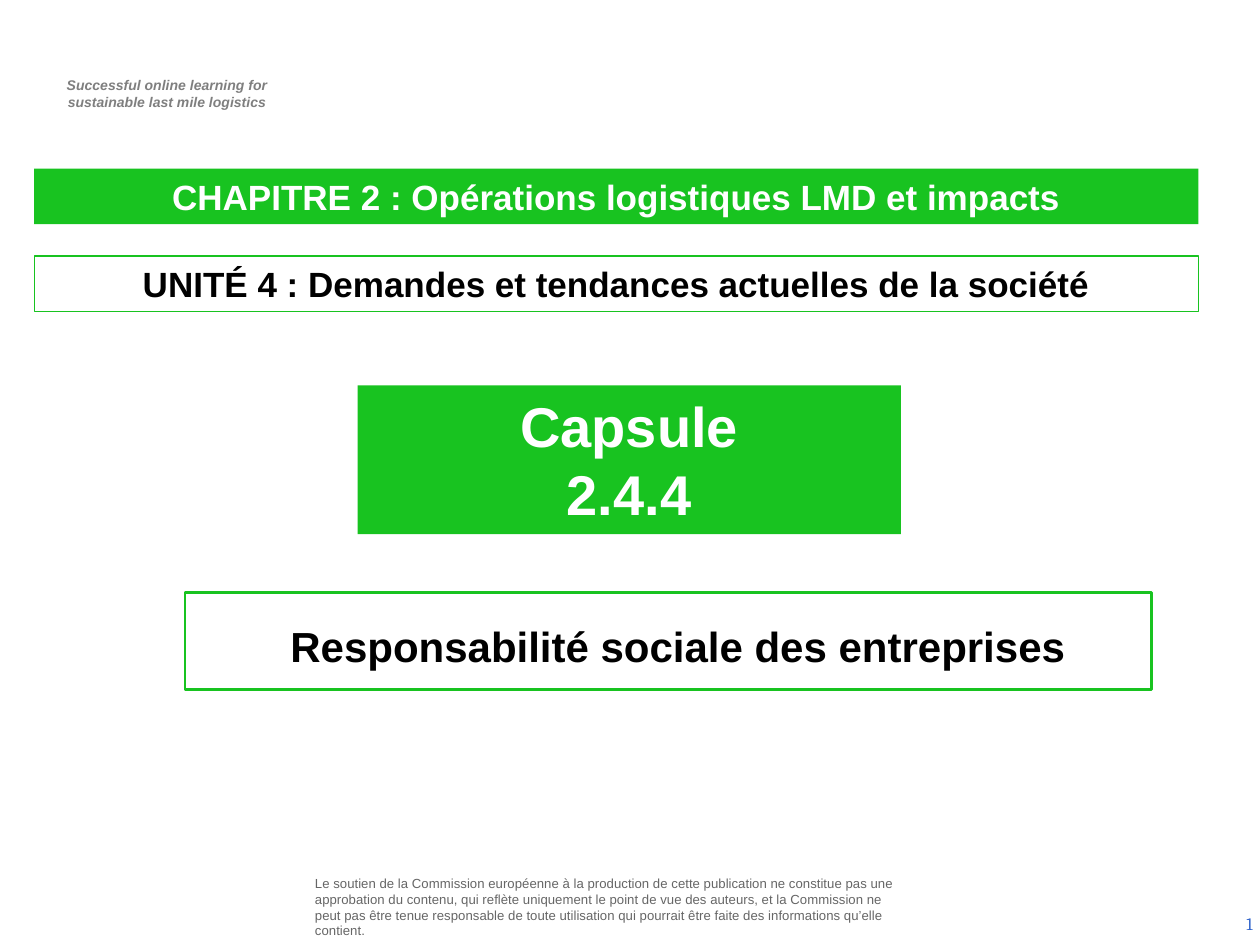
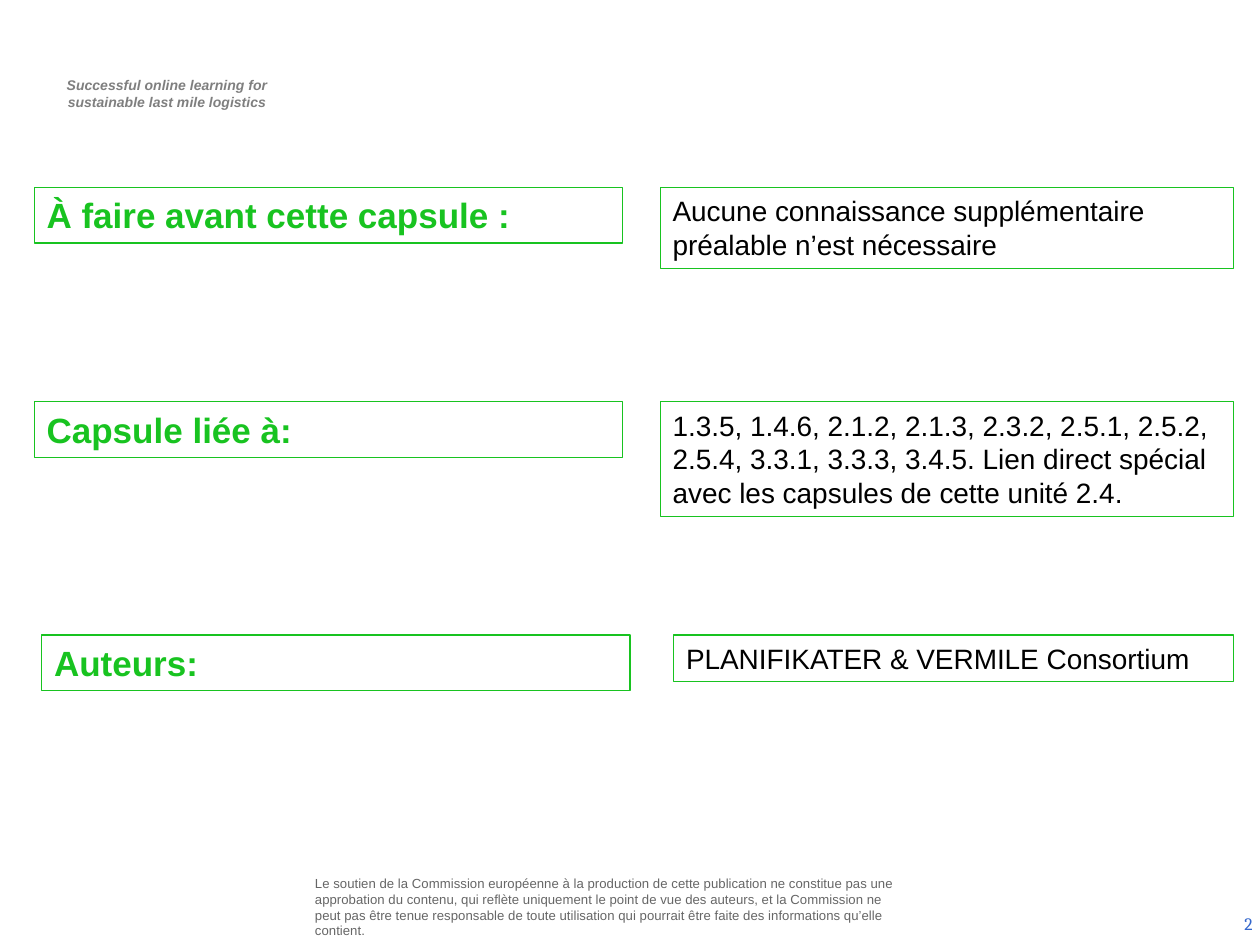
from pptx import Presentation
from pptx.dml.color import RGBColor
from pptx.enum.shapes import MSO_SHAPE
from pptx.enum.text import MSO_ANCHOR as ANCHOR, PP_ALIGN as ALIGN
from pptx.oxml.ns import qn
from pptx.util import Cm, Pt

GREEN = RGBColor(0x18, 0xC3, 0x20)
WHITE = RGBColor(0xFF, 0xFF, 0xFF)
BLACK = RGBColor(0x00, 0x00, 0x00)
TAGLINE_GREY = RGBColor(0x7F, 0x7F, 0x7F)
FOOTER_GREY = RGBColor(0x66, 0x66, 0x66)
NUMBER_BLUE = RGBColor(0x33, 0x66, 0xCC)

INSETS = (0.25, 0.13, 0.25, 0.13)
TAGLINE = "Successful online learning for\nsustainable last mile logistics"
DISCLAIMER = (
    "Le soutien de la Commission européenne à la production de cette publication "
    "ne constitue pas une approbation du contenu, qui reflète uniquement le point "
    "de vue des auteurs, et la Commission ne peut pas être tenue responsable de "
    "toute utilisation qui pourrait être faite des informations qu’elle contient."
)


def write(box, text, size, color, font="Arial", bold=False, italic=False,
          align=ALIGN.LEFT, anchor=ANCHOR.TOP, insets=INSETS):
    """Fill a box with text, one paragraph per line; insets are in cm."""
    frame = box.text_frame
    frame.word_wrap = True
    frame.vertical_anchor = anchor
    frame.margin_left, frame.margin_top, frame.margin_right, frame.margin_bottom = map(Cm, insets)
    frame.text = text
    for para in frame.paragraphs:
        para.alignment = align
        for span in para.runs:
            span.font.name = font
            span.font.size = Pt(size)
            span.font.bold = bold
            span.font.italic = italic
            span.font.color.rgb = color


def add_panel(page, left, top, width, height, text, size, color,
              fill=None, line=None, line_width=0.75, **text_format):
    panel = page.shapes.add_shape(MSO_SHAPE.RECTANGLE, Cm(left), Cm(top), Cm(width), Cm(height))
    panel.shadow.inherit = False
    if fill is None:
        panel.fill.background()
    else:
        panel.fill.solid()
        panel.fill.fore_color.rgb = fill
    if line is None:
        panel.line.fill.background()
    else:
        panel.line.color.rgb = line
        panel.line.width = Pt(line_width)
    write(panel, text, size, color, **text_format)


deck = Presentation()
deck.slide_width, deck.slide_height = Cm(25.4), Cm(19.05)
pages = [deck.slides.add_slide(deck.slide_layouts[6]) for _ in range(2)]

# Header, disclaimer and page number on every slide
for number, page in enumerate(pages, start=1):
    tagline = page.shapes.add_textbox(Cm(0.74), Cm(1.42), Cm(5.16), Cm(0.94))
    write(tagline, TAGLINE, 8, TAGLINE_GREY, bold=True, italic=True,
          align=ALIGN.CENTER, insets=(0.35, 0.13, 0.25, 0.13))

    footer = page.shapes.add_textbox(Cm(6.25), Cm(17.65), Cm(12.01), Cm(1.27))
    write(footer, DISCLAIMER, 7.5, FOOTER_GREY, anchor=ANCHOR.MIDDLE, insets=(0.1,) * 4)

    page_number = page.shapes.add_textbox(Cm(19.58), Cm(18.11), Cm(5.92), Cm(1.02))
    write(page_number, str(number), 10, NUMBER_BLUE, font="Cambria",
          align=ALIGN.RIGHT, anchor=ANCHOR.MIDDLE)
    # Turn the plain run into a slide number field
    field = page_number.text_frame.paragraphs[0].runs[0]._r
    field.tag = qn("a:fld")
    field.set("id", "{B6F15528-21DE-4FAA-801E-634DDDAF4B2B}")
    field.set("type", "slidenum")

# Slide 1: title
cover, details = pages
heading = dict(bold=True, align=ALIGN.CENTER)
add_panel(cover, 7.21, 7.77, 10.95, 3, "Capsule\n2.4.4", 32, WHITE, fill=GREEN, **heading)
add_panel(cover, 3.73, 11.94, 19.48, 1.96, "Responsabilité sociale des entreprises", 24, BLACK,
          line=GREEN, line_width=1.5, anchor=ANCHOR.BOTTOM,
          insets=(0.64, 0.13, 0.25, 0.37), **heading)
add_panel(cover, 0.69, 3.4, 23.47, 1.12, "CHAPITRE 2 : Opérations logistiques LMD et impacts",
          20, WHITE, fill=GREEN, **heading)
add_panel(cover, 0.69, 5.16, 23.47, 1.12,
          "UNITÉ 4 : Demandes et tendances actuelles de la société",
          20, BLACK, line=GREEN, **heading)

# Slide 2: label on the left, answer on the right
RIGHT_EDGE = 24.87
rows = [
    # top, label left, label, answer left, answer height, answer
    (3.78, 0.69, "À faire avant cette capsule :", 13.31, 1.63,
     "Aucune connaissance supplémentaire préalable n’est nécessaire"),
    (8.1, 0.69, "Capsule liée à:", 13.31, 2.31,
     "1.3.5, 1.4.6, 2.1.2, 2.1.3, 2.3.2, 2.5.1, 2.5.2, 2.5.4, 3.3.1, 3.3.3, 3.4.5. "
     "Lien direct spécial avec les capsules de cette unité 2.4."),
    (12.8, 0.84, "Auteurs:", 13.58, 0.94, "PLANIFIKATER & VERMILE Consortium"),
]
for top, label_left, label, answer_left, answer_height, answer in rows:
    add_panel(details, label_left, top, 11.86, 1.12, label, 20, GREEN,
              fill=WHITE, line=GREEN, bold=True)
    add_panel(details, answer_left, top, RIGHT_EDGE - answer_left, answer_height, answer,
              16, BLACK, fill=WHITE, line=GREEN)

deck.save("out.pptx")
